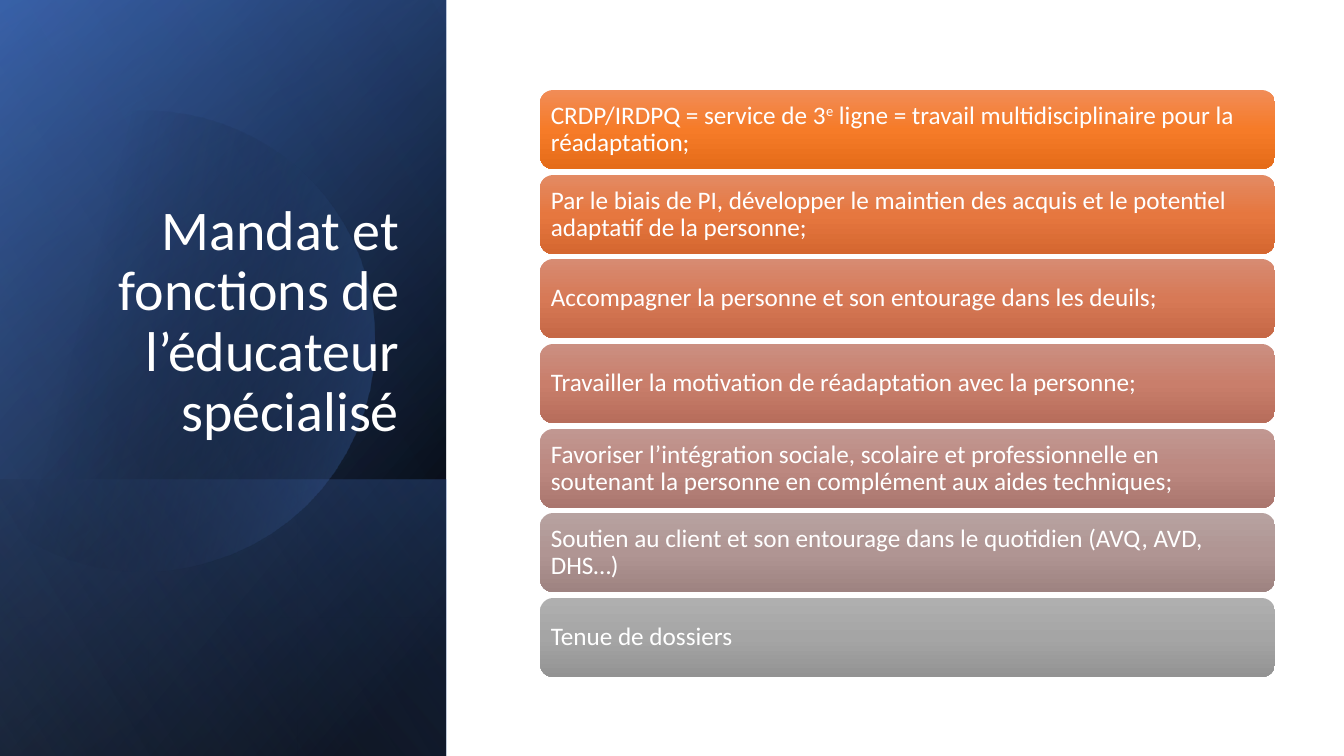
from lxml.etree import SubElement
from pptx import Presentation
from pptx.dml.color import RGBColor
from pptx.enum.shapes import MSO_SHAPE
from pptx.enum.text import MSO_ANCHOR, PP_ALIGN
from pptx.oxml.ns import qn
from pptx.util import Emu, Pt

EMU_PER_PX = 914400 / 100.8
CURVE_STEPS = 16

WHITE = RGBColor(0xFF, 0xFF, 0xFF)
BLACK = RGBColor(0x00, 0x00, 0x00)
NAVY = RGBColor(0x2F, 0x55, 0x97)
BLUE = RGBColor(0x44, 0x72, 0xC4)
LIGHT_BLUE = RGBColor(0x8F, 0xAA, 0xDC)

TITLE = "Mandat et fonctions de l’éducateur spécialisé"

# Text (superscript between carets), then top, middle and bottom colours
CARDS = [
    ("CRDP/IRDPQ = service de 3^e^ ligne = travail multidisciplinaire pour la réadaptation;",
     RGBColor(0xF1, 0x8C, 0x57), RGBColor(0xF6, 0x7B, 0x28), RGBColor(0xE5, 0x6C, 0x19)),
    ("Par le biais de PI, développer le maintien des acquis et le potentiel adaptatif de la personne;",
     RGBColor(0xE3, 0x8A, 0x63), RGBColor(0xE6, 0x77, 0x3F), RGBColor(0xD5, 0x67, 0x30)),
    ("Accompagner la personne et son entourage dans les deuils;",
     RGBColor(0xD7, 0x8B, 0x72), RGBColor(0xD7, 0x79, 0x56), RGBColor(0xC6, 0x68, 0x46)),
    ("Travailler la motivation de réadaptation avec la personne;",
     RGBColor(0xCB, 0x8F, 0x81), RGBColor(0xC9, 0x7E, 0x6B), RGBColor(0xB7, 0x6D, 0x5B)),
    ("Favoriser l’intégration sociale, scolaire et professionnelle en soutenant la personne "
     "en complément aux aides techniques;",
     RGBColor(0xC1, 0x97, 0x91), RGBColor(0xBC, 0x88, 0x80), RGBColor(0xAA, 0x76, 0x6E)),
    ("Soutien au client et son entourage dans le quotidien (AVQ, AVD, DHS…)",
     RGBColor(0xB7, 0xA2, 0xA0), RGBColor(0xB0, 0x95, 0x93), RGBColor(0x9E, 0x83, 0x81)),
    ("Tenue de dossiers",
     RGBColor(0xAF, 0xAF, 0xAF), RGBColor(0xA5, 0xA5, 0xA5), RGBColor(0x93, 0x93, 0x93)),
]
CARD_LEFT, CARD_TOP, CARD_WIDTH, CARD_HEIGHT = 540, 90, 735, 79
LAST_CARD_OFFSET = 508

# Circle cut off at the left: start point, then Bézier segments
CIRCLE_START = (150, 111)
CIRCLE_CURVES = [
    ((248, 113), (338, 178), (366, 277)),
    ((401, 400), (331, 527), (209, 562)),
    ((132, 585), (53, 566), (-3, 518)),
    ((-7, 514), (-11, 510), (-15, 507)),
    ((-15, 397), (-15, 286), (-15, 176)),
    ((-10, 172), (-5, 167), (0, 162)),
    ((23, 143), (50, 129), (81, 120)),
    ((104, 114), (127, 111), (150, 111)),
]


def px(length):
    return Emu(round(length * EMU_PER_PX))


def curve_points(start, first, second, end):
    for step in range(1, CURVE_STEPS + 1):
        t = step / CURVE_STEPS
        weights = ((1 - t) ** 3, 3 * t * (1 - t) ** 2, 3 * t * t * (1 - t), t ** 3)
        yield tuple(px(sum(w * point[axis] for w, point in zip(weights, (start, first, second, end))))
                    for axis in (0, 1))


class SlideBuilder:
    font = "Calibri"
    text_color = WHITE

    def __init__(self, page):
        self.page = page

    def paint(self, shape, angle, stops):
        """Fill with (percent, colour, opacity) stops along a clockwise angle."""
        shape.shadow.inherit = False
        shape.line.fill.background()
        shape.fill.gradient()
        gradient = shape._element.spPr.find(qn("a:gradFill"))
        stop_list = gradient.find(qn("a:gsLst"))
        for stop in list(stop_list):
            stop_list.remove(stop)
        for percent, color, opacity in stops:
            stop = SubElement(stop_list, qn("a:gs"), pos=str(percent * 1000))
            tint = SubElement(stop, qn("a:srgbClr"), val=str(color))
            if opacity < 100:
                SubElement(tint, qn("a:alpha"), val=str(opacity * 1000))
        gradient.find(qn("a:lin")).set("ang", str(angle * 60000))

    def panel(self, left, top, width, height, angle, stops):
        """Add a rectangle turned a quarter; the frame is as seen on the page."""
        shift = (width - height) / 2
        shape = self.page.shapes.add_shape(
            MSO_SHAPE.RECTANGLE, px(left + shift), px(top - shift), px(height), px(width))
        shape.rotation = 90
        shape._element.spPr.find(qn("a:xfrm")).set("flipH", "1")
        self.paint(shape, angle, stops)

    def curved_outline(self, start, curves, angle, stops):
        builder = self.page.shapes.build_freeform(px(start[0]), px(start[1]), scale=1.0)
        for curve in curves:
            builder.add_line_segments(list(curve_points(start, *curve)), close=False)
            start = curve[-1]
        builder.add_line_segments([], close=True)
        self.paint(builder.convert_to_shape(), angle, stops)

    def set_text(self, shape, text, size, anchor, align):
        frame = shape.text_frame
        frame.word_wrap = True
        frame.vertical_anchor = anchor
        para = frame.paragraphs[0]
        para.alignment = align
        para.line_spacing = 0.9
        for index, piece in enumerate(text.split("^")):
            span = para.add_run()
            span.text = piece
            span.font.name = self.font
            span.font.size = Pt(size)
            span.font.color.rgb = self.text_color
            if index % 2:
                span._r.get_or_add_rPr().set("baseline", "30000")

    def title(self, left, top, width, height, text):
        box = self.page.shapes.add_textbox(px(left), px(top), px(width), px(height))
        self.set_text(box, text, 40, MSO_ANCHOR.BOTTOM, PP_ALIGN.RIGHT)

    def card(self, left, top, width, height, text, colors):
        shape = self.page.shapes.add_shape(
            MSO_SHAPE.ROUNDED_RECTANGLE, px(left), px(top), px(width), px(height))
        self.paint(shape, 90, [(50 * i, color, 100) for i, color in enumerate(colors)])
        frame = shape.text_frame
        frame.margin_left = frame.margin_right = frame.margin_top = frame.margin_bottom = px(7)
        self.set_text(shape, text, 18, MSO_ANCHOR.MIDDLE, PP_ALIGN.LEFT)


def main():
    deck = Presentation()
    deck.slide_width, deck.slide_height = px(1344), px(756)
    slide = SlideBuilder(deck.slides.add_slide(deck.slide_layouts[6]))

    # Layered blue side panel
    side = (0, 0, 446, 756)
    slide.panel(*side, 50, [(8, BLACK, 100), (100, NAVY, 100)])
    slide.panel(*side, 30, [(0, BLACK, 0), (99, BLUE, 46)])
    slide.panel(0, 480, 446, 276, 130, [(2, BLUE, 29), (100, BLACK, 30)])
    slide.curved_outline(CIRCLE_START, CIRCLE_CURVES, 14, [(29, BLACK, 0), (100, BLUE, 43)])
    slide.panel(*side, 120, [(0, BLACK, 0), (99, LIGHT_BLUE, 11)])

    # Title
    slide.title(65, 185, 344, 264, TITLE)

    # Evenly spaced cards
    pitch = LAST_CARD_OFFSET / (len(CARDS) - 1)
    for row, (text, *colors) in enumerate(CARDS):
        slide.card(CARD_LEFT, CARD_TOP + round(row * pitch), CARD_WIDTH, CARD_HEIGHT, text, colors)

    deck.save("out.pptx")


if __name__ == "__main__":
    main()
